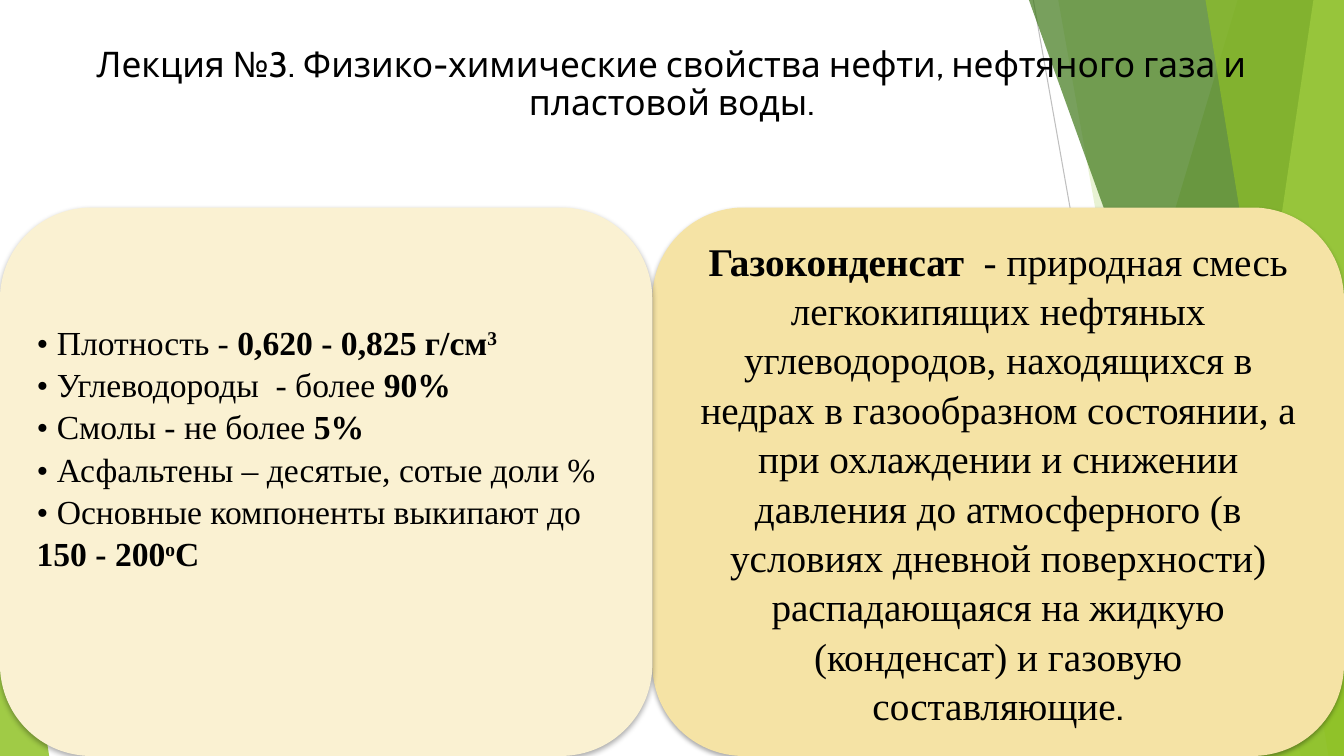
"""Builds a lecture slide on the properties of gas condensate."""
import lxml.etree
import pptx
import pptx.dml.color
import pptx.enum.shapes
import pptx.enum.text
import pptx.oxml.ns
import pptx.util

Cm = pptx.util.Cm
Pt = pptx.util.Pt
RGBColor = pptx.dml.color.RGBColor
MSO_SHAPE = pptx.enum.shapes.MSO_SHAPE
PP_ALIGN = pptx.enum.text.PP_ALIGN
MSO_ANCHOR = pptx.enum.text.MSO_ANCHOR
qn = pptx.oxml.ns.qn

BLACK = RGBColor(0x00, 0x00, 0x00)
LIME = RGBColor(0x90, 0xC2, 0x26)
GREEN = RGBColor(0x54, 0xA0, 0x21)
FOREST = RGBColor(0x3F, 0x78, 0x19)
PALE_LIME = RGBColor(0xC0, 0xE4, 0x74)
GRAY = RGBColor(0xBF, 0xBF, 0xBF)
LIGHT_GRAY = RGBColor(0xD9, 0xD9, 0xD9)
CREAM = RGBColor(0xFA, 0xF1, 0xD2)
SAND = RGBColor(0xF5, 0xE3, 0xA5)

HEAD_FONT = "Cabin"
BODY_FONT = "Times New Roman"
SLIDE_W, SLIDE_H = 33.87, 19.05

RAYS = [
    ((26.04, 0), (29.41, 19.05), GRAY),
    ((33.87, 10.24), (20.62, 19.05), LIGHT_GRAY),
]
BACK_FACETS = [(31.19, 25.5, LIME, 30), (26.67, 30.05, LIME, 20)]
FRONT_FACETS = [
    (25.93, 32.79, FOREST, 70),
    (33.1, 30.28, PALE_LIME, 70),
    (30.38, 33.48, LIME, 65),
]

TITLE = "Лекция №3. Физико-химические свойства нефти, нефтяного газа и пластовой воды."
PROPERTIES = [
    [("• Плотность - ", ""), ("0,620 - 0,825 г/см", "b"), ("3", "b^")],
    [("• Углеводороды  - более ", ""), ("90%", "b")],
    [("• Смолы - не более ", ""), ("5%", "b")],
    [("• Асфальтены – десятые, сотые доли %", "")],
    [("• Основные компоненты выкипают до ", ""), ("150 - 200", "b"), ("о", "b^"), ("С", "b")],
]
DEFINITION = [[
    ("Газоконденсат", "b"),
    ("  - природная смесь легкокипящих нефтяных углеводородов, находящихся в недрах "
     "в газообразном состоянии, а при охлаждении и снижении давления до атмосферного "
     "(в условиях дневной поверхности) распадающаяся на жидкую (конденсат) и газовую "
     "составляющие", ""),
    (".", "h"),
]]


def fill_shape(sp, color, alpha=100):
    """Give a shape a plain, possibly transparent, fill without line or shadow."""
    sp.shadow.inherit = False
    sp.line.fill.background()
    sp.fill.solid()
    sp.fill.fore_color.rgb = color
    if alpha < 100:
        clr = sp.fill._xPr.find(".//" + qn("a:srgbClr"))
        lxml.etree.SubElement(clr, qn("a:alpha"), val=str(alpha * 1000))


def add_facet(s, box, top_x, bottom_x, color, alpha):
    """Add a facet between a slanted left edge and the right edge of the box."""
    x, y, w, h = box
    fb = s.shapes.build_freeform(Cm(x + top_x), Cm(y))
    fb.add_line_segments([
        (Cm(x + w), Cm(y)), (Cm(x + w), Cm(y + h)), (Cm(x + bottom_x), Cm(y + h))
    ])
    fill_shape(fb.convert_to_shape(), color, alpha)


def add_corner(s, box, left, top, width, apex, color, alpha):
    """Add a right triangle that stands on the bottom of the box."""
    x, y, w, h = box
    sp = s.shapes.add_shape(
        MSO_SHAPE.ISOSCELES_TRIANGLE, Cm(x + left), Cm(y + top), Cm(width), Cm(h - top))
    sp.adjustments[0] = apex
    fill_shape(sp, color, alpha)


def add_backdrop(s, box):
    """Draw the rays and green facets behind the content."""
    x, y, w, h = box
    for (x1, y1), (x2, y2), color in RAYS:
        ray = s.shapes.add_connector(
            pptx.enum.shapes.MSO_CONNECTOR.STRAIGHT,
            Cm(x + x1), Cm(y + y1), Cm(x + x2), Cm(y + y2))
        ray.line.color.rgb = color
        ray.line.width = Pt(0.75)
        lxml.etree.SubElement(ray._element.spPr, qn("a:effectLst"))
    for facet in BACK_FACETS:
        add_facet(s, box, *facet)
    add_corner(s, box, w - 9.04, 8.46, 9.04, 1, GREEN, 72)
    for facet in FRONT_FACETS:
        add_facet(s, box, *facet)
    add_corner(s, box, w - 5.05, 9.98, 5.05, 1, LIME, 80)
    add_corner(s, box, 0, 11.15, 1.24, 0, LIME, 85)


def add_soft_shadow(sp):
    """Add a soft shadow that falls straight down."""
    effects = sp._element.spPr.find(qn("a:effectLst"))
    shadow = lxml.etree.SubElement(
        effects, qn("a:outerShdw"), blurRad=str(Pt(3.5)), dist=str(Pt(2.2)),
        dir="5400000", rotWithShape="0")
    clr = lxml.etree.SubElement(shadow, qn("a:srgbClr"), val=str(BLACK))
    lxml.etree.SubElement(clr, qn("a:alpha"), val="32000")


def add_card(s, box, color, paragraphs, size, align, bottom_inset=0.13):
    """Add a rounded card with paragraphs of marked runs."""
    sp = s.shapes.add_shape(MSO_SHAPE.ROUNDED_RECTANGLE, *[Cm(v) for v in box])
    fill_shape(sp, color)
    add_soft_shadow(sp)
    tf = sp.text_frame
    tf.word_wrap = True
    tf.vertical_anchor = MSO_ANCHOR.MIDDLE
    tf.margin_bottom = Cm(bottom_inset)
    for i, runs in enumerate(paragraphs):
        p = tf.add_paragraph() if i else tf.paragraphs[0]
        p.alignment = align
        p.line_spacing = 1.05
        p.font.size = Pt(size)
        p.font.color.rgb = BLACK
        for text, marks in runs:
            r = p.add_run()
            r.text = text
            r.font.name = HEAD_FONT if "h" in marks else BODY_FONT
            r.font.bold = "b" in marks
            if "^" in marks:
                r.font._element.set("baseline", "30000")


def add_title(s, box):
    """Add the centred lecture title."""
    tf = s.shapes.add_textbox(*[Cm(v) for v in box]).text_frame
    tf.word_wrap = True
    p = tf.paragraphs[0]
    p.text = TITLE
    p.alignment = PP_ALIGN.CENTER
    p.line_spacing = 0.9
    p.font.name = HEAD_FONT
    p.font.size = Pt(25.2)
    p.font.color.rgb = BLACK


def main():
    """Build and save the slide."""
    prs = pptx.Presentation()
    prs.slide_width, prs.slide_height = Cm(SLIDE_W), Cm(SLIDE_H)
    s = prs.slides.add_slide(prs.slide_layouts[6])
    add_backdrop(s, (0, 0, SLIDE_W, SLIDE_H))
    top, split = 5.23, 16.44
    height = SLIDE_H - top
    add_card(s, (split, top, SLIDE_W - split, height), SAND, DEFINITION, 28, PP_ALIGN.CENTER)
    add_card(s, (0, top, split, height), CREAM, PROPERTIES, 24, PP_ALIGN.LEFT, 1.9)
    add_title(s, (1.93, 1.07, 30, 2.34))
    prs.save("out.pptx")


if __name__ == "__main__":
    main()
